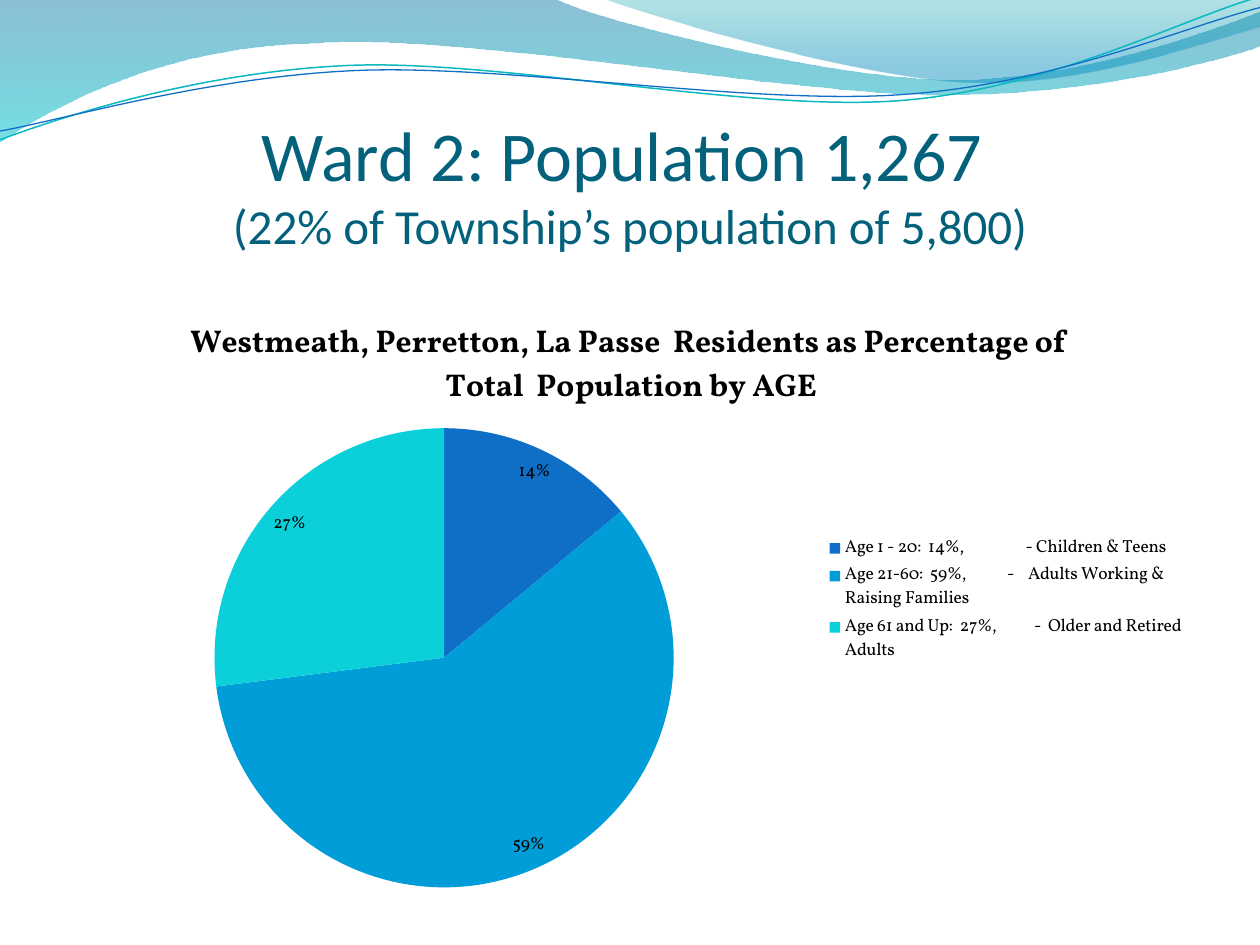
import pptx
import pptx.chart.data
import pptx.dml.color
import pptx.enum.chart
import pptx.enum.text
import pptx.oxml
import pptx.oxml.ns
import pptx.util

Inches = pptx.util.Inches
Pt = pptx.util.Pt
RGBColor = pptx.dml.color.RGBColor
qn = pptx.oxml.ns.qn
nsdecls = pptx.oxml.ns.nsdecls

BLACK = RGBColor(0x00, 0x00, 0x00)
TITLE_TEAL = RGBColor(0x04, 0x61, 0x7B)
LINE_TEAL = RGBColor(0x0A, 0xB8, 0xBF)
BLUE = RGBColor(0x0F, 0x6F, 0xC6)
SKY = RGBColor(0x00, 0x9D, 0xD9)
TURQUOISE = RGBColor(0x0B, 0xD0, 0xD9)
WAVE_TOP = RGBColor(0x00, 0x74, 0xA1)
WAVE_BOTTOM = RGBColor(0x00, 0xC6, 0xCF)
CREST_TOP = RGBColor(0x00, 0xA1, 0xA9)
CREST_BOTTOM = RGBColor(0x00, 0x8B, 0xBF)

WAVES = [
    ([(0, 0), (4.4, -0.01),
      (4.76, 0.17, 6.64, 0.63, 7.58, 0.63), (8.53, 0.63, 9.58, 0.26, 10, 0.09),
      (10.01, 0.36),
      (9.83, 0.44, 8.7, 0.76, 7.46, 0.75), (6.22, 0.75, 3.82, 0.28, 2.57, 0.34),
      (1.29, 0.36, 0.46, 0.83, -0.01, 1.13)],
     [(0, WAVE_TOP, 45), (1, WAVE_BOTTOM, 55)]),
    ([(4.79, -0.01),
      (5.09, 0.11, 6.82, 0.62, 7.69, 0.65), (8.56, 0.69, 9.61, 0.32, 10, 0.21),
      (10, 0)],
     [(0, CREST_TOP, 30), (0.8, CREST_BOTTOM, 45)]),
]

RIPPLES = [
    ([(0, 1.11), (0.48, 0.93, 1.58, 0.57, 2.77, 0.52),
      (3.95, 0.47, 5.93, 0.89, 7.13, 0.8), (8.33, 0.71, 9.38, 0.15, 9.98, -0.02)],
     LINE_TEAL, 0.85),
    ([(0, 1.04), (0.47, 0.96, 1.64, 0.61, 2.83, 0.56),
      (4.03, 0.51, 5.97, 0.84, 7.17, 0.75), (8.36, 0.67, 9.41, 0.21, 10, 0.06)],
     BLUE, 0.75),
]

HEADINGS = [
    ("Ward 2: Population 1,267 ", 40),
    ("(22% of Township’s population of 5,800)", 28),
]

CHART_TITLE = ("Westmeath, Perretton, La Passe  Residents as Percentage of  "
               "Total  Population by AGE")
AGE_GROUPS = [
    ("Age 1 - 20:  14%,                  - Children & Teens ", 0.14, BLUE),
    ("Age 21-60:  59%,            -    Adults Working & Raising Families", 0.59, SKY),
    ("Age 61 and Up:  27%,           -  Older and Retired Adults", 0.27, TURQUOISE),
]


def apply_format(target, values):
    for attribute, value in values.items():
        setattr(target, attribute, value)


def style_font(font, color, **values):
    apply_format(font, values)
    font.color.rgb = color


def add_outline(slide, segments, close):
    segments = [[Inches(value) for value in segment] for segment in segments]
    knots = [segment[-2:] for segment in segments]
    builder = slide.shapes.build_freeform(*knots[0])
    builder.add_line_segments(knots[1:], close=close)
    outline = builder.convert_to_shape()
    outline.shadow.inherit = False
    strokes = list(outline.element.spPr.iter(qn("a:lnTo")))
    for stroke, segment in zip(strokes, segments[1:]):
        if len(segment) == 6:
            points = "".join(
                f'<a:pt x="{x - outline.left}" y="{y - outline.top}"/>'
                for x, y in zip(segment[::2], segment[1::2]))
            stroke.getparent().replace(stroke, pptx.oxml.parse_xml(
                f'<a:cubicBezTo {nsdecls("a")}>{points}</a:cubicBezTo>'))
    return outline


def add_wave(slide, segments, stops):
    wave = add_outline(slide, segments, True)
    wave.line.fill.background()
    wave.fill.gradient()
    wave.fill.gradient_angle = 270
    for stop, (position, color, opacity) in zip(wave.fill.gradient_stops, stops):
        stop.position = position
        stop.color.rgb = color
    tints = list(wave.element.spPr.iter(qn("a:srgbClr")))
    for tint, (position, color, opacity) in zip(tints, stops):
        tint.append(pptx.oxml.parse_xml(
            f'<a:alpha {nsdecls("a")} val="{opacity * 1000}"/>'))


def add_ripple(slide, segments, color, width):
    ripple = add_outline(slide, segments, False)
    ripple.fill.background()
    ripple.line.color.rgb = color
    ripple.line.width = Pt(width)


def fill_title(title):
    apply_format(title, {"left": Inches(0.5), "top": Inches(0.77),
                         "width": Inches(9), "height": Inches(1.25)})
    frame = title.text_frame
    apply_format(frame, {
        "margin_left": 0, "margin_right": 0, "margin_bottom": 0,
        "margin_top": Inches(0.05), "word_wrap": True,
        "auto_size": pptx.enum.text.MSO_AUTO_SIZE.NONE,
        "vertical_anchor": pptx.enum.text.MSO_ANCHOR.BOTTOM})
    paragraph = frame.paragraphs[0]
    paragraph.alignment = pptx.enum.text.PP_ALIGN.CENTER
    for index, (text, size) in enumerate(HEADINGS):
        if index:
            paragraph.add_line_break()
        run = paragraph.add_run()
        run.text = text
        style_font(run.font, TITLE_TEAL, name="Calibri", size=Pt(size))


def place_in_chart(element, index, target, x, y, w, h):
    for layout in element.findall(qn("c:layout")):
        element.remove(layout)
    inner = f'<c:layoutTarget val="{target}"/>' if target else ""
    modes = "".join(f'<c:{axis}Mode val="edge"/>' for axis in "xy")
    sizes = "".join(f'<c:{key} val="{value}"/>'
                    for key, value in zip("xywh", (x, y, w, h)))
    element.insert(index, pptx.oxml.parse_xml(
        f'<c:layout {nsdecls("c")}><c:manualLayout>'
        f'{inner}{modes}{sizes}</c:manualLayout></c:layout>'))


def add_age_pie(slide):
    names, shares, colors = zip(*AGE_GROUPS)
    data = pptx.chart.data.CategoryChartData(number_format="0%")
    data.categories = names
    data.add_series("Series 1", shares)
    chart = slide.shapes.add_chart(
        pptx.enum.chart.XL_CHART_TYPE.PIE,
        Inches(0.51), Inches(2.33), Inches(9), Inches(4.86), data).chart
    style_font(chart.font, BLACK, name="Vollkorn", size=Pt(10))

    chart.has_title = True
    heading = chart.chart_title.text_frame
    heading.text = CHART_TITLE
    style_font(heading.paragraphs[0].runs[0].font, BLACK,
               name="Vollkorn", size=Pt(18), bold=True)

    chart.has_legend = True
    apply_format(chart.legend, {
        "position": pptx.enum.chart.XL_LEGEND_POSITION.RIGHT,
        "include_in_layout": False})
    place_in_chart(chart.legend._element, 1, None, 0.67, 0.39, 0.32, 0.22)

    pie = chart.plots[0]
    apply_format(pie, {"vary_by_categories": True, "has_data_labels": True})
    apply_format(pie.data_labels, {
        "show_value": True, "show_percentage": False,
        "number_format": "0%", "number_format_is_linked": False,
        "position": pptx.enum.chart.XL_LABEL_POSITION.BEST_FIT})
    style_font(pie.data_labels.font, BLACK, name="Vollkorn", size=Pt(10))
    for index, color in enumerate(colors):
        slice_fill = pie.series[0].points[index].format.fill
        slice_fill.solid()
        slice_fill.fore_color.rgb = color
    plot_area = chart._chartSpace.chart.plotArea
    place_in_chart(plot_area, 0, "inner", 0.13, 0.22, 0.41, 0.75)


def main():
    presentation = pptx.Presentation()
    apply_format(presentation, {"slide_width": Inches(10),
                                "slide_height": Inches(7.5)})
    slide = presentation.slides.add_slide(presentation.slide_layouts[5])
    for segments, stops in WAVES:
        add_wave(slide, segments, stops)
    for segments, color, width in RIPPLES:
        add_ripple(slide, segments, color, width)
    fill_title(slide.shapes.title)
    add_age_pie(slide)
    presentation.save("out.pptx")


if __name__ == "__main__":
    main()
